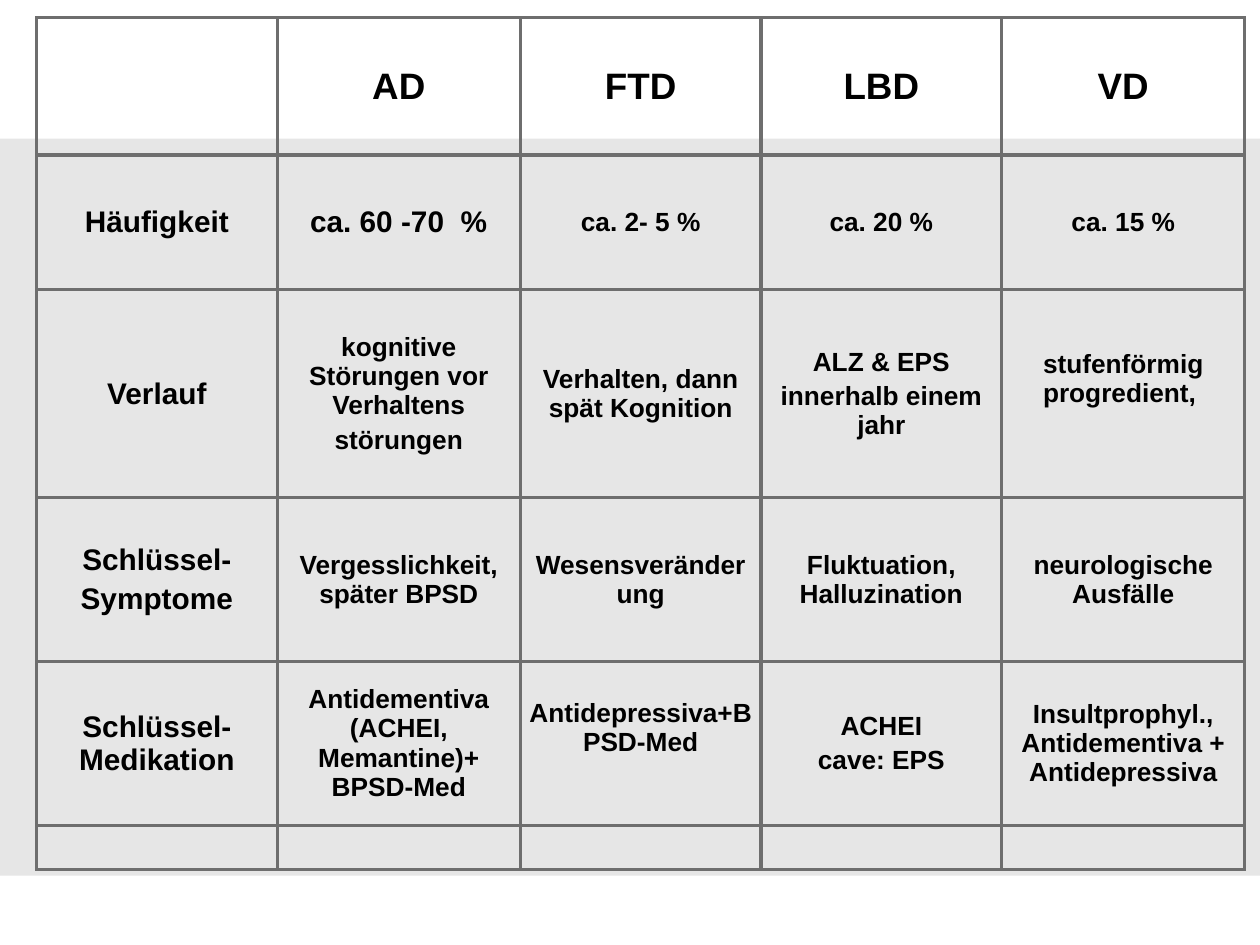
from lxml.etree import SubElement
from pptx import Presentation
from pptx.dml.color import RGBColor
from pptx.enum.shapes import MSO_SHAPE as SHAPE
from pptx.enum.text import MSO_ANCHOR as ANCHOR, PP_ALIGN as ALIGN
from pptx.oxml.ns import qn
from pptx.util import Inches, Pt

COLORS = {"band": "E6E6E6", "grid": "6E6E6E", "text": "000000"}
SIZES = {"head": 21, "label": 17, "body": 15, "empty": 12}
COLS = [1.91, 1.93, 1.91, 1.91, 1.93]
ROWS = [1.09, 1.07, 1.65, 1.3, 1.3, 0.35]
DEMENTIA = [
    ["", "AD", "FTD", "LBD", "VD"],
    ["Häufigkeit", "ca. 60 -70  %", "ca. 2- 5 %", "ca. 20 %", "ca. 15 %"],
    ["Verlauf", "kognitive Störungen vor Verhaltens\nstörungen",
     "Verhalten, dann spät Kognition", "ALZ & EPS\ninnerhalb einem jahr",
     "stufenförmig progredient, "],
    ["Schlüssel-\nSymptome", "Vergesslichkeit, später BPSD", "Wesensveränderung",
     "Fluktuation, Halluzination", "neurologische Ausfälle"],
    ["Schlüssel-Medikation", "Antidementiva (ACHEI, Memantine)+ BPSD-Med",
     "Antidepressiva+BPSD-Med", "ACHEI\ncave: EPS",
     "Insultprophyl., Antidementiva + Antidepressiva"],
    [""] * 5,
]
RAISED = {(2, 4), (4, 2)}  # cells whose text sits half a line above the middle


class SlideBuilder:
    font = "Arial"
    border = Pt(2)
    margins = {"margin_left": 0.07, "margin_right": 0.07,
               "margin_top": 0.04, "margin_bottom": 0.04}

    def __init__(self, prs):
        self.w, self.h = prs.slide_width, prs.slide_height
        self.s = prs.slides.add_slide(prs.slide_layouts[6])

    def band(self, top, height):
        """Full-width background band; top and height are shares of the slide."""
        sp = self.s.shapes.add_shape(SHAPE.RECTANGLE, 0, int(top * self.h),
                                     self.w, int(height * self.h))
        sp.shadow.inherit = False
        sp.fill.solid()
        sp.fill.fore_color.rgb = RGBColor.from_string(COLORS["band"])
        sp.line.fill.background()

    def table(self, left, top, cols, rows, data):
        frame = self.s.shapes.add_table(
            len(rows), len(cols), int(left * self.w), int(top * self.h),
            Inches(sum(cols)), Inches(sum(rows)))
        table = frame.table
        table.first_row = table.horz_banding = False
        for col, width in zip(table.columns, cols):
            col.width = Inches(width)
        for row, height in zip(table.rows, rows):
            row.height = Inches(height)
        for i, texts in enumerate(data):
            for j, text in enumerate(texts):
                self.cell(table.cell(i, j), text, self.size(i, j), (i, j) in RAISED)

    @staticmethod
    def size(row, col):
        if row == 0:
            return SIZES["head"]
        return SIZES["label" if col == 0 or (row, col) == (1, 1) else "body"]

    def cell(self, cell, text, size, raised):
        self.borders(cell)
        cell.fill.background()
        cell.vertical_anchor = ANCHOR.MIDDLE
        for name, value in self.margins.items():
            setattr(cell, name, Inches(value))
        if raised:
            cell.margin_bottom += Pt(size * 1.15)
        tf = cell.text_frame
        if not text:
            tf.paragraphs[0]._p.get_or_add_endParaRPr().set("sz", str(SIZES["empty"] * 100))
            return
        for n, line in enumerate(text.split("\n")):
            p = tf.add_paragraph() if n else tf.paragraphs[0]
            p.alignment = ALIGN.CENTER
            p.space_before = Pt(size * 0.2 if n else 0)
            r = p.add_run()
            r.text = line
            for name, value in {"name": self.font, "size": Pt(size), "bold": True}.items():
                setattr(r.font, name, value)
            r.font.color.rgb = RGBColor.from_string(COLORS["text"])

    def borders(self, cell):
        props = cell._tc.get_or_add_tcPr()
        for side in ("lnL", "lnR", "lnT", "lnB"):
            ln = SubElement(props, qn(f"a:{side}"), w=str(self.border))
            fill = SubElement(ln, qn("a:solidFill"))
            SubElement(fill, qn("a:srgbClr"), val=COLORS["grid"])


def main():
    prs = Presentation()
    prs.slide_width, prs.slide_height = Inches(10), Inches(7.5)
    slide = SlideBuilder(prs)
    slide.band(top=1.1 / 7.5, height=0.78)
    slide.table(0.029, 0.14 / 7.5, COLS, ROWS, DEMENTIA)
    prs.save("out.pptx")


if __name__ == "__main__":
    main()
